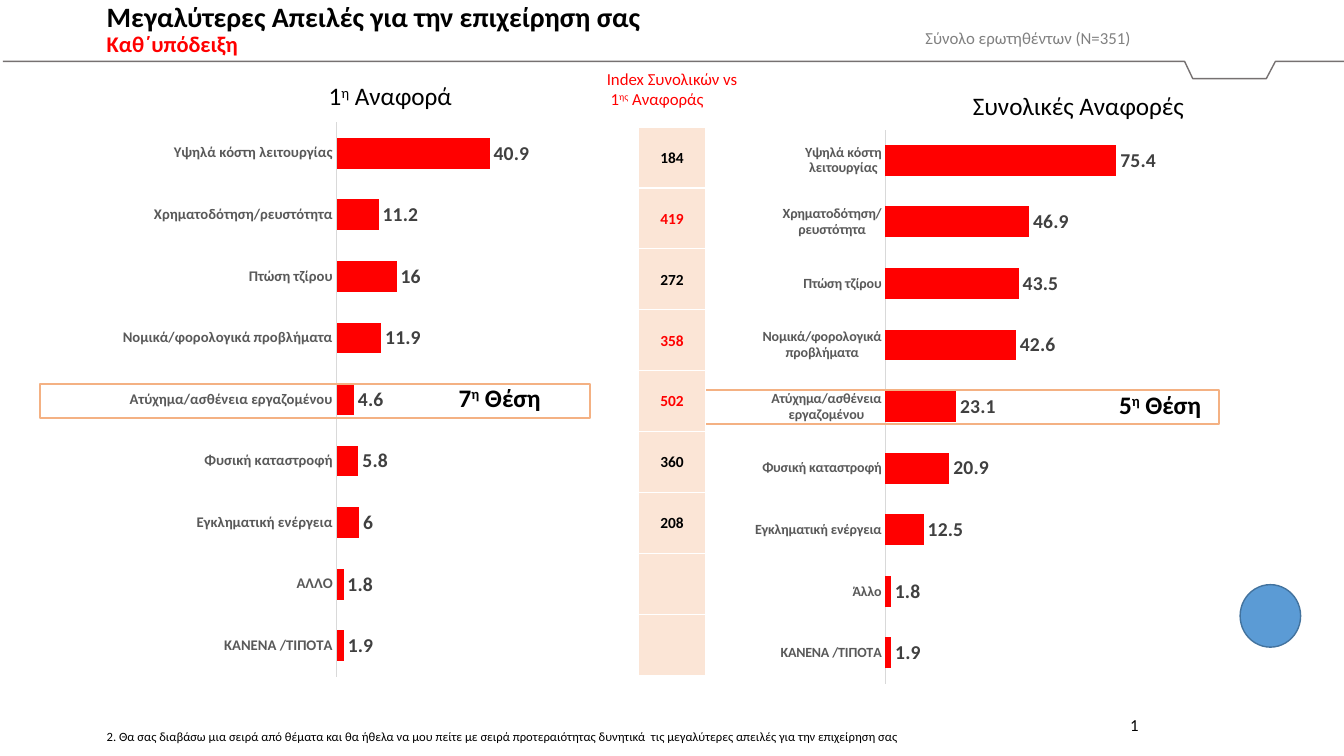
import pptx
import pptx.chart.data
import pptx.dml.color
import pptx.enum.chart
import pptx.enum.shapes
import pptx.enum.text
import pptx.oxml
import pptx.oxml.ns
import pptx.util
from pptx.util import Inches, Pt

FONT = "Calibri"
COLORS = {
    "black": "000000", "white": "FFFFFF", "red": "FF0000", "grey": "808080",
    "rule": "767171", "category": "595959", "label": "404040", "axis": "D9D9D9",
    "highlight": "F4B183", "cell": "FBE5D6", "circle": "5B9BD5", "circle_line": "43739E",
}
THREATS = ["Υψηλά κόστη λειτουργίας", "Χρηματοδότηση/ρευστότητα", "Πτώση τζίρου",
           "Νομικά/φορολογικά προβλήματα", "Ατύχημα/ασθένεια εργαζομένου",
           "Φυσική καταστροφή", "Εγκληματική ενέργεια"]
NOTHING = "ΚΑΝΕΝΑ /ΤΙΠΟΤΑ"
FIRST = [40.9, 11.2, 16, 11.9, 4.6, 5.8, 6, 1.8, 1.9]
TOTAL = [75.4, 46.9, 43.5, 42.6, 23.1, 20.9, 12.5, 1.8, 1.9]
INDEX = ["184", "419", "272", "358", "502", "360", "208", "", ""]
HIGH_INDEX = {"419", "358", "502"}


def rgb(name):
    return pptx.dml.color.RGBColor.from_string(COLORS[name])


def style_font(font, size, color="black", bold=False):
    font.name, font.size, font.bold = FONT, Pt(size), bold
    font.color.rgb = rgb(color)


def write(p, text, size=18, color="black", bold=False):
    """Fill a paragraph; text between ^ marks is raised."""
    for i, part in enumerate(text.split("^")):
        r = p.add_run()
        r.text = part
        style_font(r.font, size, color, bold)
        if i % 2:
            r._r.get_or_add_rPr().set("baseline", "30000")


def add_text(s, box, text, wrap=False, anchor="TOP", **fmt):
    tf = s.shapes.add_textbox(*map(Inches, box)).text_frame
    tf.word_wrap = wrap
    tf.vertical_anchor = pptx.enum.text.MSO_ANCHOR[anchor]
    if not wrap:
        tf.auto_size = pptx.enum.text.MSO_AUTO_SIZE.SHAPE_TO_FIT_TEXT
    write(tf.paragraphs[0], text, **fmt)
    return tf


def add_shape(s, kind, box, line, width, fill=None):
    sp = s.shapes.add_shape(pptx.enum.shapes.MSO_SHAPE[kind], *map(Inches, box))
    sp.shadow.inherit = False
    if fill:
        sp.fill.solid()
        sp.fill.fore_color.rgb = rgb(fill)
    else:
        sp.fill.background()
    sp.line.color.rgb = rgb(line)
    sp.line.width = Pt(width)


def add_header(s, box):
    x, y, w, h = box
    # Rule with a notch
    points = [(0.03, 0.61), (11.75, 0.61), (11.83, 0.78),
              (12.56, 0.78), (12.65, 0.61), (w, 0.61)]
    points = [(Inches(x + px), Inches(y + py)) for px, py in points]
    fb = s.shapes.build_freeform(*points[0])
    fb.add_line_segments(points[1:], close=False)
    sp = fb.convert_to_shape()
    sp.shadow.inherit = False
    sp.fill.background()
    sp.line.color.rgb = rgb("rule")
    sp.line.width = Pt(1)
    # Title, subtitle and base
    tf = add_text(s, (x + 0.96, y - 0.02, 6.59, 0.64),
                  "Μεγαλύτερες Απειλές για την επιχείρηση σας",
                  wrap=True, anchor="MIDDLE", size=20, bold=True)
    write(tf.add_paragraph(), "Kαθ΄υπόδειξη", size=16, color="red", bold=True)
    for p in tf.paragraphs:
        p.line_spacing = 0.9
    add_text(s, (x + 9.08, y + 0.23, 2.3, 0.3), "Σύνολο ερωτηθέντων (N=351)",
             size=12, color="grey")


def set_plot_area(chart, x, w, h):
    sizes = "".join(f'<c:{tag} val="{val}"/>' for tag, val in
                    (("x", x), ("y", 0), ("w", w), ("h", h)))
    layout = pptx.oxml.parse_xml(
        f'<c:layout {pptx.oxml.ns.nsdecls("c")}><c:manualLayout>'
        '<c:layoutTarget val="inner"/><c:xMode val="edge"/><c:yMode val="edge"/>'
        f'{sizes}</c:manualLayout></c:layout>')
    area = chart._chartSpace.chart.plotArea
    for old in area.findall(pptx.oxml.ns.qn("c:layout")):
        area.remove(old)
    area.insert(0, layout)


def add_bars(s, box, other, values, maximum, size, plot_x, plot_w):
    data = pptx.chart.data.CategoryChartData()
    data.categories = THREATS + [other, NOTHING]
    data.add_series("Series 1", values)
    chart = s.shapes.add_chart(pptx.enum.chart.XL_CHART_TYPE.BAR_CLUSTERED,
                               *map(Inches, box), data).chart
    chart.has_legend = chart.has_title = False
    style_font(chart.font, 10)
    set_plot_area(chart, plot_x, plot_w, 0.981)
    # Axes
    cat, val = chart.category_axis, chart.value_axis
    cat.reverse_order = True
    cat.has_major_gridlines = False
    cat.major_tick_mark = pptx.enum.chart.XL_TICK_MARK.NONE
    cat.format.line.color.rgb = rgb("axis")
    cat.format.line.width = Pt(0.75)
    style_font(cat.tick_labels.font, size, "category", True)
    val.has_major_gridlines = val.visible = False
    val.minimum_scale, val.maximum_scale, val.major_unit = 0, maximum, 20
    # Bars and values
    plot = chart.plots[0]
    plot.gap_width = 100
    plot.vary_by_categories = False
    fill = plot.series[0].format.fill
    fill.solid()
    fill.fore_color.rgb = rgb("red")
    labels = plot.series[0].data_labels
    labels.show_value = True
    labels.position = pptx.enum.chart.XL_LABEL_POSITION.OUTSIDE_END
    style_font(labels.font, 14, "label", True)


def add_rank(s, box, text, text_x, text_y):
    """Frame around the highlighted row, with its rank."""
    x, y, w, h = box
    add_shape(s, "RECTANGLE", box, "highlight", 1.5)
    add_text(s, (x + text_x, y + text_y, 1.09, 0.4), text, bold=True)


def add_borders(cell):
    pr = cell._tc.get_or_add_tcPr()
    for i, side in enumerate(("lnL", "lnR", "lnT", "lnB")):
        pr.insert(i, pptx.oxml.parse_xml(
            f'<a:{side} {pptx.oxml.ns.nsdecls("a")} w="12700"><a:solidFill>'
            f'<a:srgbClr val="{COLORS["white"]}"/></a:solidFill></a:{side}>'))


def add_index(s, box):
    x, y, w, h = box
    table = s.shapes.add_table(len(INDEX), 1, *map(Inches, box)).table
    table.first_row = table.horz_banding = False
    for row, value in zip(table.rows, INDEX):
        row.height = Inches(h / len(INDEX))
        cell = row.cells[0]
        cell.fill.solid()
        cell.fill.fore_color.rgb = rgb("cell")
        cell.margin_left = cell.margin_right = cell.margin_top = Inches(0.01)
        cell.margin_bottom = 0
        cell.vertical_anchor = pptx.enum.text.MSO_ANCHOR.MIDDLE
        add_borders(cell)
        if value:
            p = cell.text_frame.paragraphs[0]
            p.alignment = pptx.enum.text.PP_ALIGN.CENTER
            write(p, value, size=11, bold=True,
                  color="red" if value in HIGH_INDEX else "black")
    add_text(s, (x - 0.41, y - 0.63, 1.5, 0.5), "Index Συνολικών vs  1^ης^ Αναφοράς",
             wrap=True, size=12, color="red")


def add_footer(s, box):
    x, y, w, h = box
    add_text(s, (x, y, w, h), "2. Θα σας διαβάσω μια σειρά από θέματα και θα ήθελα να μου "
             "πείτε με σειρά προτεραιότητας δυνητικά  τις μεγαλύτερες απειλές για την "
             "επιχείρηση σας", wrap=True, anchor="BOTTOM", size=9)
    add_text(s, (x + 10.15, y + 0.17, 0.6, 0.4), "1", wrap=True, size=12)


def main():
    prs = pptx.Presentation()
    prs.slide_width, prs.slide_height = Inches(13.33), Inches(7.5)
    s = prs.slides.add_slide(prs.slide_layouts[6])
    add_header(s, (0, 0, 13.33, 0.78))
    # First mention
    add_bars(s, (0.44, 1.21, 6.73, 5.61), "ΆΛΛΟ", FIRST, 100, 10.5, 0.431, 0.551)
    add_text(s, (3.16, 0.75, 1.51, 0.4), "1^η^ Αναφορά")
    add_rank(s, (0.4, 3.81, 5.45, 0.34), "7^η^ Θέση", 4.05, -0.07)
    # All mentions
    add_bars(s, (7.39, 1.28, 5.95, 5.61), "Άλλο", TOTAL, 150, 10, 0.234, 0.766)
    add_text(s, (9.55, 0.85, 2.38, 0.4), "Συνολικές Αναφορές")
    add_rank(s, (6.64, 3.87, 5.45, 0.34), "5^η^ Θέση", 4.36, -0.06)
    # Index column, marker and footer
    add_index(s, (6.33, 1.26, 0.67, 5.44))
    add_shape(s, "OVAL", (12.3, 5.8, 0.6, 0.62), "circle_line", 1, "circle")
    add_footer(s, (0.96, 6.87, 10.33, 0.56))
    prs.save("out.pptx")


if __name__ == "__main__":
    main()
